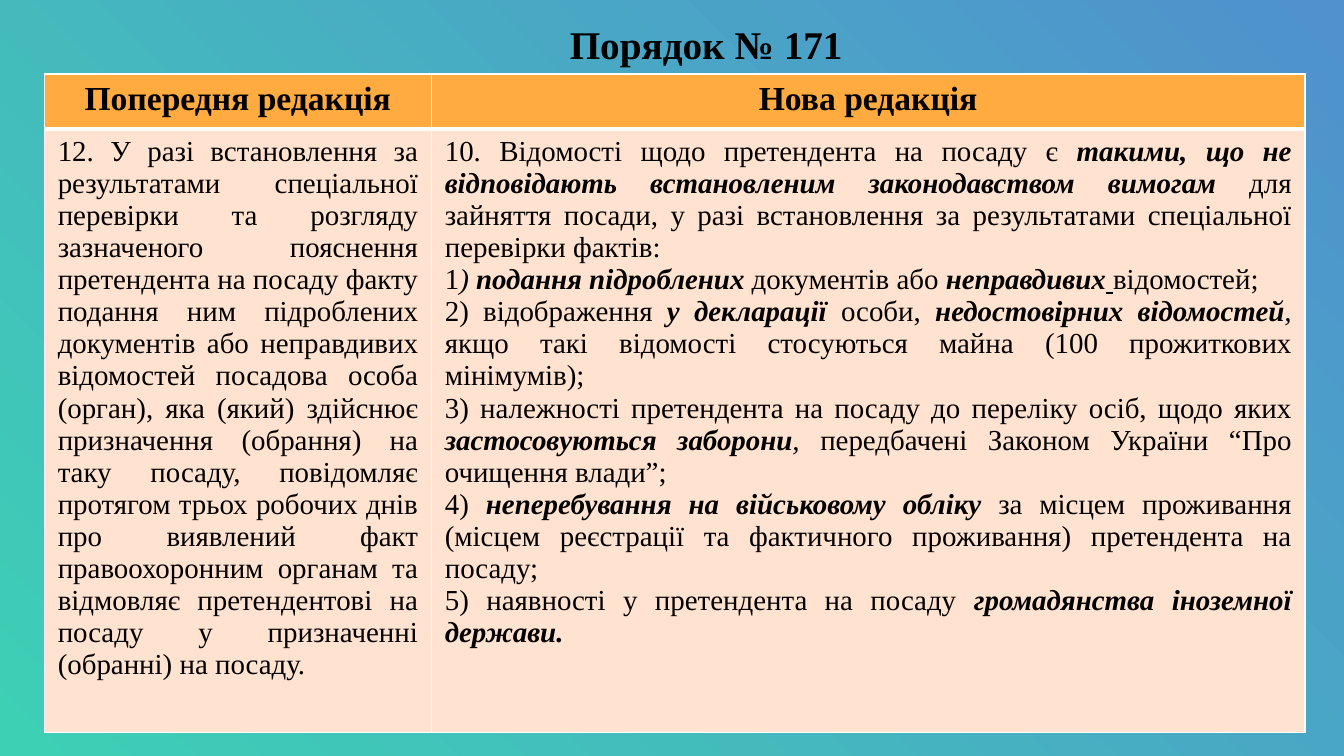
from lxml.etree import SubElement
from pptx import Presentation
from pptx.dml.color import RGBColor
from pptx.enum.text import MSO_ANCHOR, PP_ALIGN
from pptx.oxml.ns import qn
from pptx.util import Inches, Pt

TEAL = RGBColor(0x3D, 0xD0, 0xB4)
BLUE = RGBColor(0x50, 0x91, 0xCE)
ORANGE = RGBColor(0xFF, 0xAB, 0x40)
PEACH = RGBColor(0xFF, 0xE2, 0xCF)
BLACK = RGBColor(0, 0, 0)
WHITE = RGBColor(0xFF, 0xFF, 0xFF)

# Each paragraph is a list of (text, style): b bold, i italic, u underlined
PREVIOUS_VERSION = [[(
    "12. У разі встановлення за результатами спеціальної перевірки та розгляду "
    "зазначеного пояснення претендента на посаду факту подання ним підроблених "
    "документів або неправдивих відомостей посадова особа (орган), яка (який) "
    "здійснює призначення (обрання) на таку посаду, повідомляє протягом трьох "
    "робочих днів про виявлений факт правоохоронним органам та відмовляє "
    "претендентові на посаду у призначенні (обранні) на посаду.", "")]]
NEW_VERSION = [
    [("10. Відомості щодо претендента на посаду є ", ""),
     ("такими, що не відповідають встановленим законодавством вимогам ", "bi"),
     ("для зайняття посади, у разі встановлення за результатами спеціальної "
      "перевірки фактів:", "")],
    [("1", ""), (") ", "i"), ("подання підроблених ", "bi"),
     ("документів або ", ""), ("неправдивих", "bi"), (" ", "bu"),
     ("відомостей;", "")],
    [("2) відображення ", ""), ("у декларації ", "bi"), ("особи, ", ""),
     ("недостовірних відомостей", "bi"), (", ", "i"),
     ("якщо такі відомості стосуються майна (100 прожиткових мінімумів);", "")],
    [("3) належності претендента на посаду до переліку осіб, щодо яких ", ""),
     ("застосовуються заборони", "bi"), (", ", "i"),
     ("передбачені Законом України “Про очищення влади”;", "")],
    [("4) ", ""), ("неперебування на військовому обліку ", "bi"),
     ("за місцем проживання (місцем реєстрації та фактичного проживання) "
      "претендента на посаду;", "")],
    [("5) наявності у претендента на посаду ", ""),
     ("громадянства іноземної держави.", "bi")],
]


def write_text(frame, paragraphs, size, align, font="Times New Roman", color=BLACK):
    """Fill a text frame with styled paragraphs and return the paragraphs."""
    for index, pieces in enumerate(paragraphs):
        paragraph = frame.paragraphs[0] if index == 0 else frame.add_paragraph()
        paragraph.alignment = align
        for text, style in pieces:
            run = paragraph.add_run()
            run.text = text
            run.font.name, run.font.size = font, Pt(size)
            run.font.color.rgb = color
            run.font.bold = "b" in style
            run.font.italic = "i" in style
            run.font.underline = "u" in style
    return frame.paragraphs


class ComparisonSlide:
    """Slide style; positions are percentages of the slide's width and height."""

    title_size, header_size, body_size = 21, 18, 15.5
    thin, thick = 1, 3

    def __init__(self, deck):
        self.width, self.height = deck.slide_width, deck.slide_height
        self.slide = deck.slides.add_slide(deck.slide_layouts[6])

    def across(self, percent):
        return round(self.width * percent / 100)

    def down(self, percent):
        return round(self.height * percent / 100)

    def background(self, start, end):
        fill = self.slide.background.fill
        fill.gradient()
        for stop, color, position in zip(fill.gradient_stops, (start, end), (0, 1)):
            stop.color.rgb, stop.position = color, position
        # Radiate from the bottom left corner
        gradient = next(self.slide.element.iter(qn("a:gradFill")))
        gradient.remove(gradient.find(qn("a:lin")))
        radial = SubElement(gradient, qn("a:path"), {"path": "circle"})
        SubElement(radial, qn("a:fillToRect"), t="100000", r="100000")

    def title(self, text, left, top, width, height):
        box = self.slide.shapes.add_textbox(
            self.across(left), self.down(top), self.across(width), self.down(height))
        frame = box.text_frame
        frame.word_wrap = True
        frame.vertical_anchor = MSO_ANCHOR.TOP
        frame.margin_left = frame.margin_right = Inches(0.1)
        frame.margin_top = frame.margin_bottom = Inches(0.1)
        heading = write_text(frame, [[(text, "b")]], self.title_size, PP_ALIGN.CENTER)[0]
        heading.line_spacing, heading.space_after = 1.15, Pt(8)
        heading._p.get_or_add_pPr().set("indent", str(Inches(0.5)))

    def border(self, cell, sides):
        properties = cell._tc.get_or_add_tcPr()
        for index, (side, points) in enumerate(sides.items()):
            line = properties.makeelement(qn(f"a:ln{side}"), {"w": str(Pt(points))})
            SubElement(SubElement(line, qn("a:solidFill")), qn("a:srgbClr"), val=str(WHITE))
            properties.insert(index, line)

    def table(self, headers, bodies, left, top, height, columns, rows):
        holder = self.slide.shapes.add_table(
            len(rows), len(columns), self.across(left), self.down(top),
            self.across(sum(columns)), self.down(height))
        grid = holder.table
        for column, share in zip(grid.columns, columns):
            column.width = self.across(share)
        for row, share in zip(grid.rows, rows):
            row.height = self.down(share)
        # Row heights reset the outer height
        holder.height = self.down(height)
        header_look = (ORANGE, self.header_size, PP_ALIGN.CENTER, self.thin, self.thick)
        body_look = (PEACH, self.body_size, PP_ALIGN.JUSTIFY, self.thick, self.thin)
        looks = (header_look, body_look)
        for row, (contents, look) in enumerate(zip((headers, bodies), looks)):
            fill, size, align, above, below = look
            for column, paragraphs in enumerate(contents):
                cell = grid.cell(row, column)
                cell.fill.solid()
                cell.fill.fore_color.rgb = fill
                write_text(cell.text_frame, paragraphs, size, align)
                self.border(cell, {"L": self.thin, "R": self.thin, "T": above, "B": below})


def main():
    deck = Presentation()
    deck.slide_width = Inches(10)
    deck.slide_height = Inches(10 * 9 / 16)
    page = ComparisonSlide(deck)
    page.background(TEAL, BLUE)

    # Title above the two versions of the rule
    page.title("Порядок № 171", left=2.4, top=0, width=95.3, height=21.16)
    headers = [[[(name, "b")]] for name in ("Попередня редакція", "Нова редакція")]
    page.table(headers, [PREVIOUS_VERSION, NEW_VERSION], left=3.3, top=9.78,
               height=87.11, columns=(28.8, 65), rows=(7.29, 78.04))
    deck.save("out.pptx")


if __name__ == "__main__":
    main()
